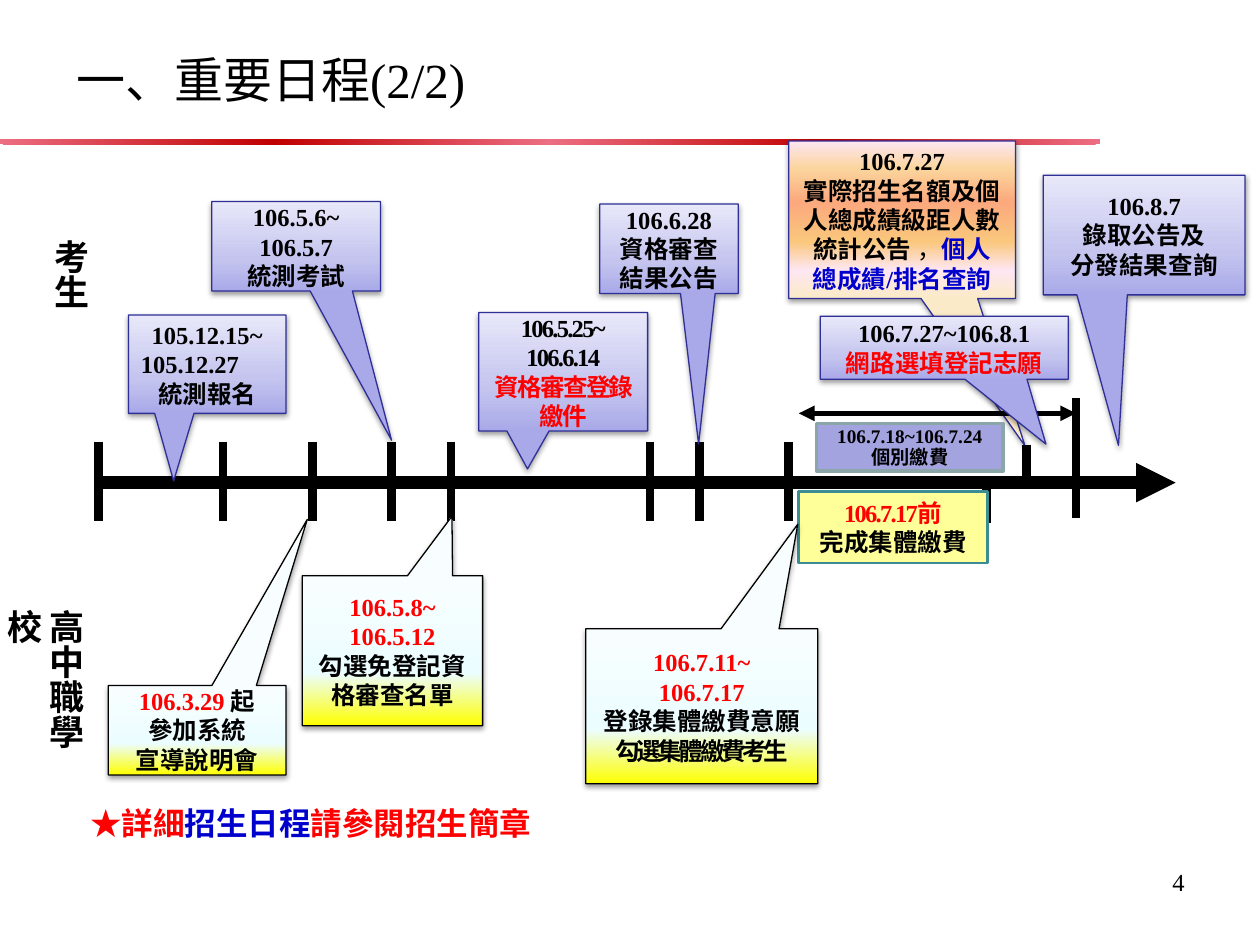
from lxml import etree
from pptx import Presentation
from pptx.dml.color import RGBColor
from pptx.enum import shapes, text
from pptx.oxml import ns, parse_xml
from pptx.util import Pt


class Theme:
    font = "Times New Roman"
    ink, red, blue = "000000", "FF0000", "0000CC"
    edge, teal, grey = "2F2F98", "3C8C93", "8AA6A8"
    lilac, cream = "A3A3E0", "FFFF99"
    violet = [(0, "A9A9E9"), (35, "C4C4EF"), (100, "E8E8FA")]
    lemon = [(0, "FFFF00"), (35, "ECFDFF"), (100, "F8FEFF")]
    peach = [(0, "FBEAC7"), (18, "FEE7F2"), (36, "FAC77D"),
             (61, "FBA97D"), (82, "FBD49C"), (100, "FEE7F2")]
    rule = [(0, "EC6E82"), (50, "C00000"), (100, "EC6E82")]
    title, side, note, body, small = 28, 20, 18, 14, 11


RECT = shapes.MSO_SHAPE.RECTANGLE
CALL = shapes.MSO_SHAPE.RECTANGULAR_CALLOUT
MID, TOP = text.MSO_ANCHOR.MIDDLE, text.MSO_ANCHOR.TOP
LEFT, CENTER, RIGHT = text.PP_ALIGN.LEFT, text.PP_ALIGN.CENTER, text.PP_ALIGN.RIGHT
DOWN = '<a:lin ang="16200000" scaled="0"/>'
ROUND = '<a:path path="circle"><a:fillToRect l="50000" t="50000" r="50000" b="50000"/></a:path>'
SHADOW = ('<a:outerShdw blurRad="40000" dist="20000" dir="5400000" rotWithShape="0">'
          '<a:srgbClr val="000000"><a:alpha val="38000"/></a:srgbClr></a:outerShdw>')


def say(frame, words, new=True, color=Theme.ink, size=Theme.body,
        bold=True, align=CENTER, gap=0, lead=None):
    """Add a run, in a new paragraph unless new is False."""
    para = frame.paragraphs[-1]
    if new and para.runs:
        para = frame.add_paragraph()
    if new:
        para.alignment = align
        if lead:
            para.line_spacing = Pt(lead)
    run = para.add_run()
    run.text = words
    run.font.name, run.font.size, run.font.bold = Theme.font, Pt(size), bold
    run.font.color.rgb = RGBColor.from_string(color)
    if gap:
        run.font._element.set("spc", str(gap * 100))


def box(at, runs=(), kind=None, fill=None, edge=None, width=0.75,
        adj=None, anchor=MID, grow=False, shade=DOWN, **form):
    """Draw a shape, or a text box when kind is None, and fill in its runs."""
    at = [Pt(n) for n in at]
    if kind is None:
        item = slide.shapes.add_textbox(*at)
    else:
        item = slide.shapes.add_shape(kind, *at)
        item.shadow.inherit = False
    if isinstance(fill, list):
        stops = "".join(f'<a:gs pos="{pos * 1000}"><a:srgbClr val="{hue}"/></a:gs>'
                        for pos, hue in fill)
        geom = item._element.spPr.find(ns.qn("a:prstGeom"))
        geom.addnext(parse_xml(f'<a:gradFill {ns.nsdecls("a")} rotWithShape="1">'
                               f'<a:gsLst>{stops}</a:gsLst>{shade}</a:gradFill>'))
    elif fill:
        item.fill.solid()
        item.fill.fore_color.rgb = RGBColor.from_string(fill)
    if edge:
        item.line.color.rgb = RGBColor.from_string(edge)
        item.line.width = Pt(width)
    else:
        item.line.fill.background()
    if adj:
        item.adjustments[0], item.adjustments[1] = adj
        old = item._element.spPr.find(ns.qn("a:effectLst"))
        old.getparent().replace(old, parse_xml(
            f'<a:effectLst {ns.nsdecls("a")}>{SHADOW}</a:effectLst>'))
    frame = item.text_frame
    frame.word_wrap = True
    frame.vertical_anchor = anchor
    if grow:
        frame.auto_size = text.MSO_AUTO_SIZE.SHAPE_TO_FIT_TEXT
    for words, look in runs:
        say(frame, words, **{**form, **look})
    return item


deck = Presentation()
deck.slide_width, deck.slide_height = Pt(720), Pt(540)
slide = deck.slides.add_slide(deck.slide_layouts[6])
plain, red = {}, {"color": Theme.red}
tight = {"gap": -1}

# Heading
box((-0.7, 79.5, 629.3, 3), kind=RECT, fill=Theme.rule, shade=ROUND)
box((36.7, 20.2, 628.6, 49.7), [("一、重要日程(2/2)", plain)],
    size=Theme.title, bold=False, align=LEFT)

# Results callout, which lies behind the timeline
box((450.7, 80.6, 129.6, 90),
    [("106.7.27", plain), ("實際招生名額及個人總成績級距人數統計公告 ", plain),
     ("，", {"new": False, "bold": False}),
     ("個人總成績/排名查詢", {"new": False, "color": Theme.blue})],
    kind=CALL, fill=Theme.peach, edge=Theme.edge, adj=(0.542, 1.436))

# Timeline: x1, y1, x2, y2, width, arrowheads
lines = [(56.2, 275.8, 671.8, 275.8, 7.5, ["tailEnd"])]
ticks = [(x, 252.7, 298) for x in (56.2, 127.4, 178.6, 223.9, 257.8, 371.5, 399.6, 450.7)]
ticks += [(563.8, 277.2, 298.8), (586.8, 254.2, 276.5), (614.9, 227.5, 295.9)]
lines += [(x, top, x, low, 5, []) for x, top, low in ticks]
lines += [(456.5, 236.2, 614.9, 236.2, 3, ["headEnd", "tailEnd"])]
for *ends, width, heads in lines:
    line = slide.shapes.add_connector(shapes.MSO_CONNECTOR.STRAIGHT, *[Pt(n) for n in ends])
    line.line.color.rgb = RGBColor.from_string(Theme.ink)
    line.line.width = Pt(width)
    for head in heads:
        etree.SubElement(line.line._ln, ns.qn("a:" + head), type="triangle")
    etree.SubElement(line._element.spPr, ns.qn("a:effectLst"))

# Payment boxes
box((456.5, 280.8, 108, 41), [("106.7.17前", {**red, **tight}), ("完成集體繳費", plain)],
    kind=RECT, fill=Theme.cream, edge=Theme.teal, width=1.5, anchor=TOP, grow=True)
fee = [("106.7.18~106.7.24", plain), ("個別繳費", plain)]

# Callouts for students
for at, adj, runs in [
    ((73.4, 180, 90, 56.2), (-0.213, 1.187),
     [("105.12.15~", plain), ("105.12.27", {"align": LEFT}), ("統測報名", plain)]),
    ((121, 115.2, 96.5, 51.1), (0.565, 2.168),
     [("106.5.6~", plain), ("106.5.7", plain), ("統測考試", plain)]),
    ((273.6, 178.6, 96.5, 67.7), (-0.211, 0.82),
     [("106.5.25~", tight), ("106.6.14", tight), ("資格審查登錄繳件", {**red, **tight})]),
    ((342.7, 116.6, 79.2, 51.1), (0.214, 2.183),
     [("106.6.28", plain), ("資格審查", plain), ("結果公告", plain)]),
    ((468.7, 180.7, 141.8, 36), (0.41, 1.531),
     [("106.7.27~106.8.1", plain), ("網路選填登記志願", red)]),
    ((596.2, 100.1, 115.2, 68.4), (-0.127, 1.757),
     [("106.8.7", plain), ("錄取公告及", plain), ("分發結果查詢", plain)]),
]:
    box(at, runs, kind=CALL, fill=Theme.violet, edge=Theme.edge, adj=adj)

# Callouts for schools
for at, adj, runs in [
    ((61.9, 391.7, 101.5, 51.1), (0.62, -2.356),
     [("106.3.29 ", red), ("起", {"new": False}), ("參加系統", plain), ("宣導說明會", plain)]),
    ((172.8, 329, 103, 85.7), (0.33, -0.897),
     [("106.5.8~", red), ("106.5.12", red), ("勾選免登記資格審查名單", plain)]),
    ((334.8, 359.3, 132.5, 88.6), (0.414, -1.174),
     [("106.7.11~", red), ("106.7.17", red), ("登錄集體繳費意願", plain),
      ("勾選集體繳費考生", {"gap": -2})]),
]:
    box(at, runs, kind=CALL, fill=Theme.lemon, edge=Theme.ink, adj=adj)

box((466.6, 241.9, 106.6, 27.4), fee, kind=RECT, fill=Theme.lilac,
    edge=Theme.grey, width=2, size=Theme.small, lead=12)

# Row labels, note and page number
for at, words in [((17.3, 129.6, 38.9, 73.4), "考生"),
                  ((14.4, 341.3, 38.9, 113.8), "高中職學校")]:
    label = box(at, [(words, plain)], size=Theme.side, align=LEFT, anchor=TOP, grow=True)
    label.text_frame._txBody.bodyPr.set("vert", "eaVert")
box((44.6, 455.8, 280.8, 28.8),
    [("★詳細", red), ("招生日程", {"new": False, "color": Theme.blue}),
     ("請參閱招生簡章", {"new": False, **red})],
    size=Theme.note, align=LEFT, anchor=TOP, grow=True)
box((516.2, 491.8, 167.8, 37.4), [("4", plain)], bold=False, align=RIGHT, anchor=TOP)

deck.save("out.pptx")
